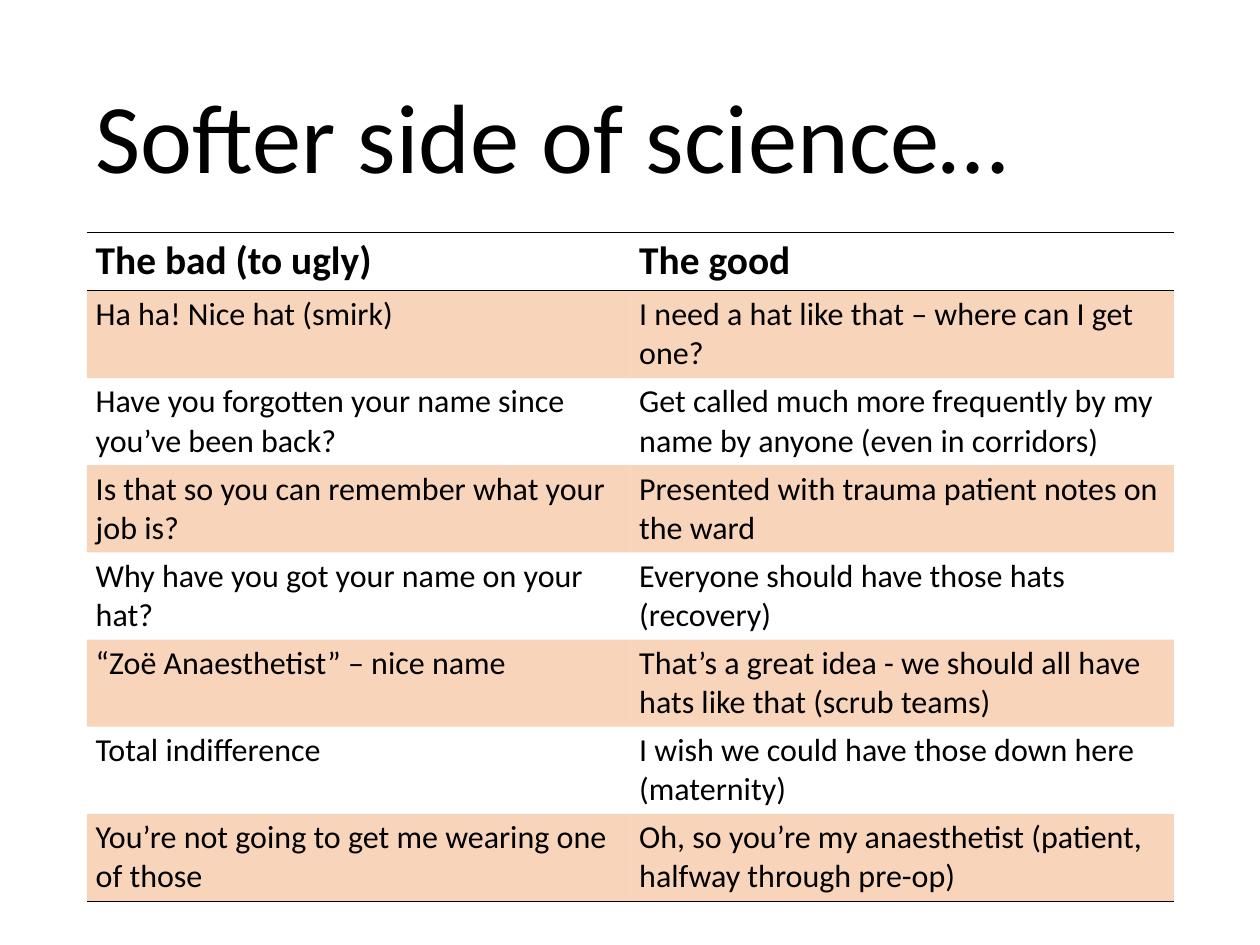
from lxml import etree
from pptx import Presentation
from pptx import util as u
from pptx.dml import color
from pptx.enum import text
from pptx.oxml import ns

NO_STYLE = "{2D5ABB26-0587-4C30-8999-92F81FD0307C}"
LEFT, WIDTH = 2.49, 31.16
HEADER_HEIGHT, ROW_HEIGHT = 1.66, 2.5

COMMENTS = [
    ("The bad (to ugly)", "The good"),
    ("Ha ha! Nice hat (smirk)", "I need a hat like that – where can I get one?"),
    ("Have you forgotten your name since you’ve been back?",
     "Get called much more frequently by my name by anyone (even in corridors)"),
    ("Is that so you can remember what your job is?",
     "Presented with trauma patient notes on the ward"),
    ("Why have you got your name on your hat?",
     "Everyone should have those hats (recovery)"),
    ("“Zoë Anaesthetist” – nice name",
     "That’s a great idea - we should all have hats like that (scrub teams)"),
    ("Total indifference", "I wish we could have those down here (maternity)"),
    ("You’re not going to get me wearing one of those",
     "Oh, so you’re my anaesthetist (patient, halfway through pre-op)"),
]


def rgb(value):
    return color.RGBColor.from_string(value)


class Deck:
    font = "Calibri"
    ink = "000000"
    band = "F4B183"
    band_alpha = 55

    def __init__(self, width, height):
        self.prs = Presentation()
        self.prs.slide_width, self.prs.slide_height = u.Cm(width), u.Cm(height)
        self.s = self.prs.slides.add_slide(self.prs.slide_layouts[5])

    def set_text(self, tf, words, size, bold=False):
        p = tf.paragraphs[0]
        p.text = words
        p.alignment = text.PP_ALIGN.LEFT
        p.font.name, p.font.size, p.font.bold = self.font, u.Pt(size), bold
        p.font.color.rgb = rgb(self.ink)
        return p

    def title(self, words, left, top, width, height, size):
        sp = self.s.shapes.title
        sp.left, sp.top = u.Cm(left), u.Cm(top)
        sp.width, sp.height = u.Cm(width), u.Cm(height)
        tf = sp.text_frame
        tf.auto_size = text.MSO_AUTO_SIZE.NONE
        tf.vertical_anchor = text.MSO_ANCHOR.MIDDLE
        self.set_text(tf, words, size).line_spacing = 0.9

    def shade(self, cell):
        cell.fill.solid()
        cell.fill.fore_color.rgb = rgb(self.band)
        clr = cell._tc.tcPr.find(".//" + ns.qn("a:srgbClr"))
        etree.SubElement(clr, ns.qn("a:alpha"), val=str(self.band_alpha * 1000))

    def rule(self, cell, sides):
        for i, side in enumerate(sides):
            ln = etree.Element(ns.qn("a:ln" + side), w=str(u.Pt(1)))
            fill = etree.SubElement(ln, ns.qn("a:solidFill"))
            etree.SubElement(fill, ns.qn("a:srgbClr"), val=self.ink)
            cell._tc.get_or_add_tcPr().insert(i, ln)

    def table(self, rows, left, top, width, header_height, row_height):
        height = header_height + row_height * (len(rows) - 1)
        frame = self.s.shapes.add_table(len(rows), len(rows[0]), u.Cm(left),
                                        u.Cm(top), u.Cm(width), u.Cm(height))
        tbl = frame.table
        tbl.first_row = tbl.horz_banding = False
        tbl._tbl.tblPr.find(ns.qn("a:tableStyleId")).text = NO_STYLE
        borders = {0: "TB", len(rows) - 1: "B"}
        for i, row in enumerate(rows):
            header = i == 0
            tbl.rows[i].height = u.Cm(header_height if header else row_height)
            for j, words in enumerate(row):
                cell = tbl.cell(i, j)
                self.set_text(cell.text_frame, words, 32 if header else 26, header)
                if i % 2:
                    self.shade(cell)
                else:
                    cell.fill.background()
                self.rule(cell, borders.get(i, ""))


def main():
    deck = Deck(36.12, 27.1)
    deck.title("Softer side of science…", LEFT, 1.45, WIDTH, 5.23, 80)
    deck.table(COMMENTS, LEFT, 6.68, WIDTH, HEADER_HEIGHT, ROW_HEIGHT)
    deck.prs.save("out.pptx")


if __name__ == "__main__":
    main()
